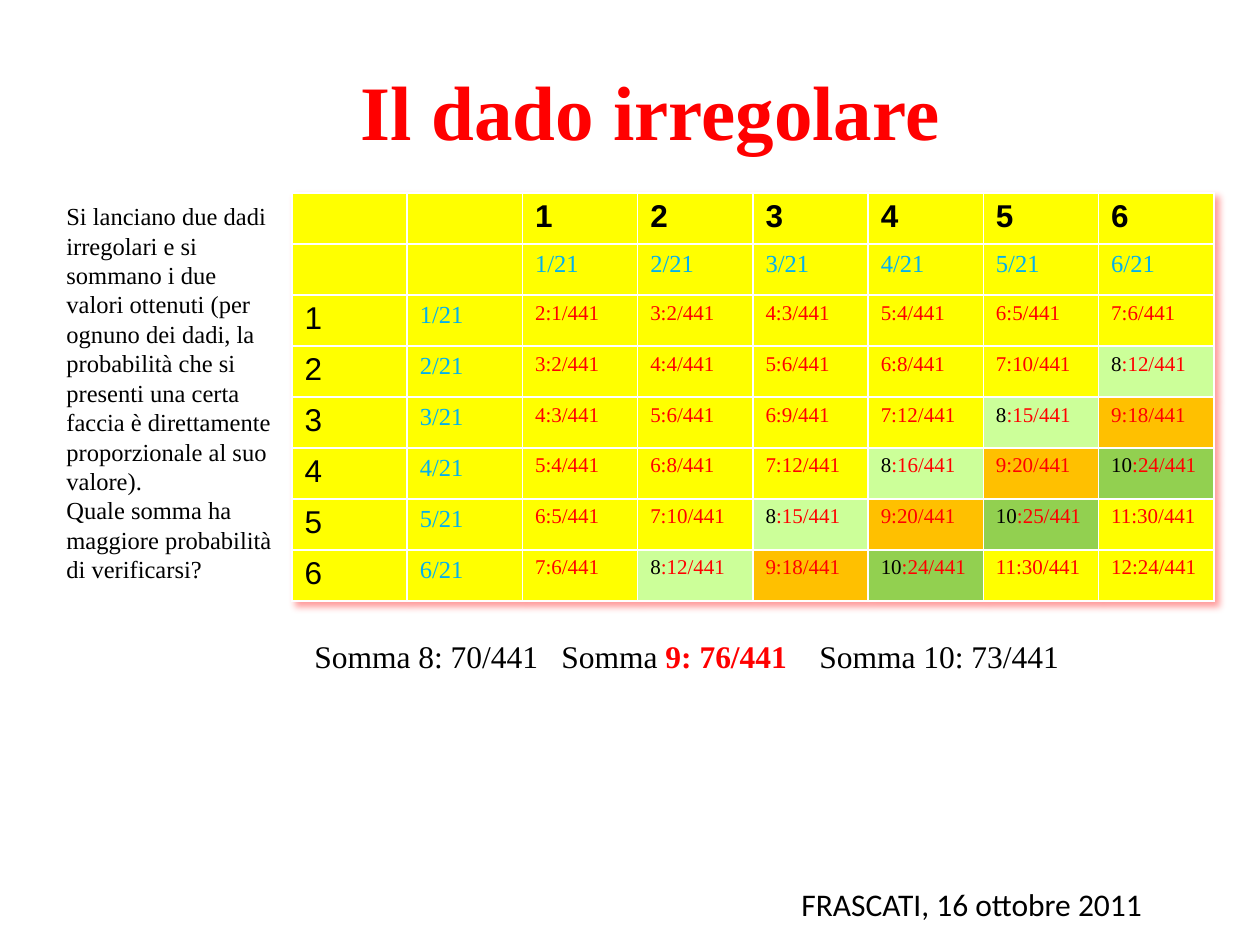
from dataclasses import dataclass
from typing import NamedTuple

from lxml.etree import SubElement
from pptx import Presentation
from pptx.dml.color import RGBColor as Rgb
from pptx.enum.text import MSO_ANCHOR as Anchor, MSO_AUTO_SIZE as Fit, PP_ALIGN as Align
from pptx.oxml.ns import qn
from pptx.util import Emu, Pt

SCALE = 914400 / 126  # EMU in one px


@dataclass(frozen=True)
class Theme:
    black: str = "000000"
    red: str = "FF0000"
    blue: str = "00B0F0"
    yellow: str = "FFFF00"
    lime: str = "CCFF99"
    amber: str = "FFC000"
    green: str = "92D050"
    serif: str = "Times New Roman"
    sans: str = "Arial"
    plain: str = "Calibri"
    head: int = 44
    large: int = 18
    body: int = 14
    small: int = 12


class Box(NamedTuple):
    left: int
    top: int
    width: int
    height: int


class Style(NamedTuple):
    face: str
    size: int
    color: str
    bold: bool = False


class Span(NamedTuple):
    text: str
    style: Style


T = Theme()
TITLE = Style(T.serif, T.head, T.red, True)
NOTE = Style(T.serif, T.body, T.black)
SUM = Style(T.serif, T.large, T.black)
BEST = Style(T.serif, T.large, T.red, True)
PLACE = Style(T.plain, T.large, T.black)
FACE = Style(T.sans, T.large, T.black)
TOP = Style(T.sans, T.large, T.black, True)
ODDS = Style(T.serif, T.body, T.blue)
CELL = Style(T.serif, T.small, T.red)
MARK = Style(T.serif, T.small, T.black)

FILLS = {8: T.lime, 9: T.amber, 10: T.green}
DARK = {8, 10}  # sums written in black
SIDES = range(1, 7)
SHOWN = {(6, 6): 24}  # shown instead of the product

QUERY = [
    "Si lanciano due dadi irregolari e si sommano i due valori ottenuti "
    "(per ognuno dei dadi, la probabilità che si presenti una certa faccia "
    "è direttamente proporzionale al suo valore).",
    "Quale somma ha maggiore probabilità di verificarsi?",
]


def px(n: int) -> Emu:
    return Emu(round(n * SCALE))


def dress(font, style: Style) -> None:
    font.name, font.size, font.bold = style.face, Pt(style.size), style.bold
    font.color.rgb = Rgb.from_string(style.color)


def write(para, spans: list[Span]) -> None:
    """Fill a paragraph, with one font if all spans share it."""
    same = len({span.style for span in spans}) == 1
    if same:
        dress(para.font, spans[0].style)
    for span in spans:
        run = para.add_run()
        run.text = span.text
        if not same:
            dress(run.font, span.style)


def add_text(slide, box: Box, paras: list[list[Span]]):
    frame = slide.shapes.add_textbox(*map(px, box)).text_frame
    frame.word_wrap = True
    frame.auto_size = Fit.SHAPE_TO_FIT_TEXT
    for i, spans in enumerate(paras):
        write(frame.add_paragraph() if i else frame.paragraphs[0], spans)
    return frame


def set_tabs(para, stops: list[int]) -> None:
    tabs = SubElement(para._p.get_or_add_pPr(), qn("a:tabLst"))
    para._p.pPr.insert(0, tabs)
    for stop in stops:
        SubElement(tabs, qn("a:tab"), pos=str(px(stop)), algn="l")


def add_shade(table) -> None:
    """Give the table a soft red shadow, ahead of its style id."""
    props = table._tbl.tblPr
    fx = SubElement(props, qn("a:effectLst"))
    props.insert(0, fx)
    shade = SubElement(fx, qn("a:outerShdw"), blurRad="50800", dist="38100",
                       dir="2700000", algn="tl", rotWithShape="0")
    color = SubElement(shade, qn("a:srgbClr"), val=T.red)
    SubElement(color, qn("a:alpha"), val="40000")


def set_cell(cell, spans: list[Span], fill: str = T.yellow) -> None:
    cell.fill.solid()
    cell.fill.fore_color.rgb = Rgb.from_string(fill)
    if spans:
        write(cell.text_frame.paragraphs[0], spans)


def pair(a: int, b: int) -> list[Span]:
    """Sum of two faces and its chance."""
    total, odds = a + b, f":{SHOWN.get((a, b), a * b)}/441"
    if total in DARK:
        return [Span(str(total), MARK), Span(odds, CELL)]
    return [Span(f"{total}{odds}", CELL)]


def add_grid(slide, box: Box) -> None:
    size = len(SIDES) + 2
    table = slide.shapes.add_table(size, size, *map(px, box)).table
    table.horz_banding = False
    add_shade(table)
    for row in range(2):
        for col in range(2):
            set_cell(table.cell(row, col), [])
    for a in SIDES:
        odds = [Span(f"{a}/21", ODDS)]
        set_cell(table.cell(0, a + 1), [Span(str(a), TOP)])
        set_cell(table.cell(1, a + 1), odds)
        set_cell(table.cell(a + 1, 0), [Span(str(a), FACE)])
        set_cell(table.cell(a + 1, 1), odds)
        for b in SIDES:
            set_cell(table.cell(a + 1, b + 1), pair(a, b), FILLS.get(a + b, T.yellow))


def add_title(slide, box: Box, text: str) -> None:
    title = slide.shapes.title
    title.left, title.top, title.width, title.height = map(px, box)
    frame = title.text_frame
    frame.vertical_anchor = Anchor.MIDDLE
    para = frame.paragraphs[0]
    para.alignment = Align.CENTER
    write(para, [Span(text, TITLE)])


def main() -> None:
    deck = Presentation()
    deck.slide_width, deck.slide_height = px(1260), px(945)
    slide = deck.slides.add_slide(deck.slide_layouts[5])
    add_text(slide, Box(54, 195, 238, 398), [[Span(text, NOTE)] for text in QUERY])
    add_grid(slide, Box(292, 193, 922, 408))
    add_title(slide, Box(115, 45, 1071, 129), "Il dado irregolare")
    sums = add_text(slide, Box(302, 631, 922, 50), [[
        Span("Somma 8: 70/441\tSomma ", SUM),
        Span("9: 76/441", BEST),
        Span("\tSomma 10: 73/441", SUM),
    ]])
    set_tabs(sums.paragraphs[0], [247, 505])
    add_text(slide, Box(789, 879, 387, 50), [[Span("FRASCATI, 16 ottobre 2011", PLACE)]])
    deck.save("out.pptx")


if __name__ == "__main__":
    main()
